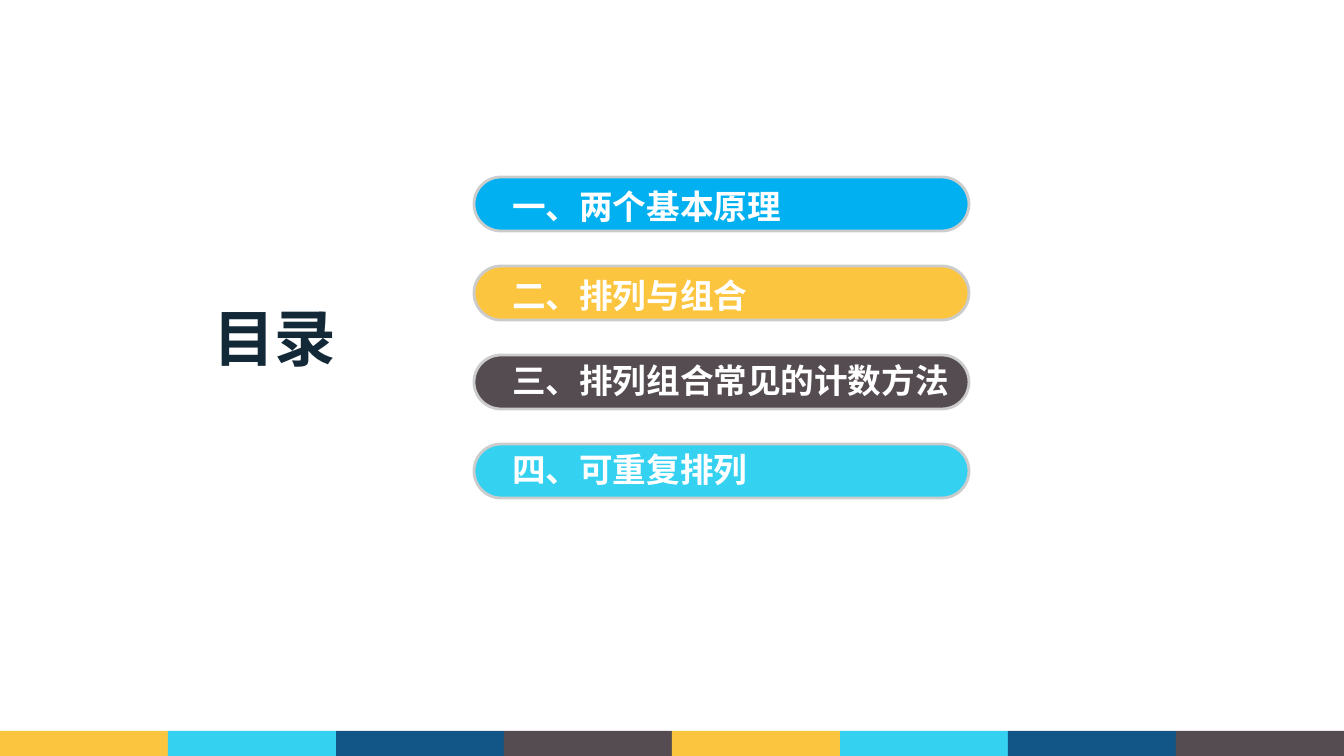
"""Build the contents slide: a heading, four chapter pills and a footer of colour bands."""
from dataclasses import dataclass
from itertools import cycle, islice

from lxml.etree import SubElement
from pptx import Presentation
from pptx.dml.color import RGBColor as Rgb
from pptx.enum.shapes import MSO_SHAPE as Shape
from pptx.enum.text import MSO_ANCHOR as Anchor, MSO_AUTO_SIZE as AutoSize, PP_ALIGN as Align
from pptx.oxml.ns import qn
from pptx.util import Emu, Pt


@dataclass(frozen=True)
class Theme:
    font: str = "Noto Sans CJK SC"
    blue: str = "00B0F0"
    yellow: str = "FCC540"
    brown: str = "554C51"
    cyan: str = "35D1F1"
    navy: str = "115686"
    ink: str = "142938"
    white: str = "FFFFFF"
    outline: str = "CCCCCC"
    heading_size: int = 44
    chapter_size: int = 24
    outline_width: int = 2


PX = 914400 / 100.8
SLIDE_WIDTH, SLIDE_HEIGHT = 1344, 756


def px(*lengths):
    return [Emu(round(length * PX)) for length in lengths]


def apply(target, values):
    for name, value in values.items():
        setattr(target, name, value)


class ContentsSlide:
    def __init__(self, deck, theme):
        self.theme = theme
        self.slide = deck.slides.add_slide(deck.slide_layouts[5])

    def add_text(self, holder, text, size, color, align, indent=0):
        frame = holder.text_frame
        apply(frame, {"word_wrap": True, "auto_size": AutoSize.NONE,
                      "vertical_anchor": Anchor.MIDDLE, "margin_left": px(indent)[0],
                      "margin_right": 0, "margin_top": 0, "margin_bottom": 0})
        paragraph = frame.paragraphs[0]
        paragraph.alignment = align
        run = paragraph.add_run()
        run.text = text
        run.font.color.rgb = Rgb.from_string(color)
        apply(run.font, {"name": self.theme.font, "size": Pt(size), "bold": True})
        SubElement(run.font._element, qn("a:ea"), typeface=self.theme.font)

    def heading(self, text, box):
        title = self.slide.shapes.title
        apply(title, dict(zip(("left", "top", "width", "height"), px(*box))))
        self.add_text(title, text, self.theme.heading_size, self.theme.ink, Align.CENTER)

    def block(self, kind, box, color, parent=None):
        shape = (parent or self.slide).shapes.add_shape(kind, *px(*box))
        shape.shadow.inherit = False
        shape.fill.solid()
        shape.fill.fore_color.rgb = Rgb.from_string(color)
        shape.line.fill.background()
        return shape

    def pill(self, box, color):
        pill = self.block(Shape.ROUNDED_RECTANGLE, box, color)
        pill.adjustments[0] = 0.5
        pill.line.color.rgb = Rgb.from_string(self.theme.outline)
        pill.line.width = Pt(self.theme.outline_width)

    def chapter(self, text, box):
        label = self.slide.shapes.add_textbox(*px(*box))
        self.add_text(label, text, self.theme.chapter_size, self.theme.white, Align.LEFT, 10)

    def footer(self, colors, count, height):
        band_width = SLIDE_WIDTH // count
        footer = self.slide.shapes.add_group_shape()
        for index, color in enumerate(islice(cycle(colors), count)):
            box = (index * band_width, SLIDE_HEIGHT - height, band_width, height)
            self.block(Shape.RECTANGLE, box, color, footer)


def main():
    theme = Theme()
    deck = Presentation()
    deck.slide_width, deck.slide_height = px(SLIDE_WIDTH, SLIDE_HEIGHT)
    contents = ContentsSlide(deck, theme)
    contents.heading("目录", (201, 292, 148, 89))

    chapters = [
        ("一、两个基本原理", theme.blue, 4),
        ("二、排列与组合", theme.yellow, 4),
        ("三、排列组合常见的计数方法", theme.brown, 0),
        ("四、可重复排列", theme.cyan, 0),
    ]
    first_top, pitch = 177, 89
    for index, (chapter, color, drop) in enumerate(chapters):
        top = first_top + index * pitch
        contents.pill((474, top, 495, 54), color)
        contents.chapter(chapter, (502, top + drop, 458, 50))

    contents.footer([theme.yellow, theme.cyan, theme.navy, theme.brown], 8, 25)
    deck.save("out.pptx")


if __name__ == "__main__":
    main()
